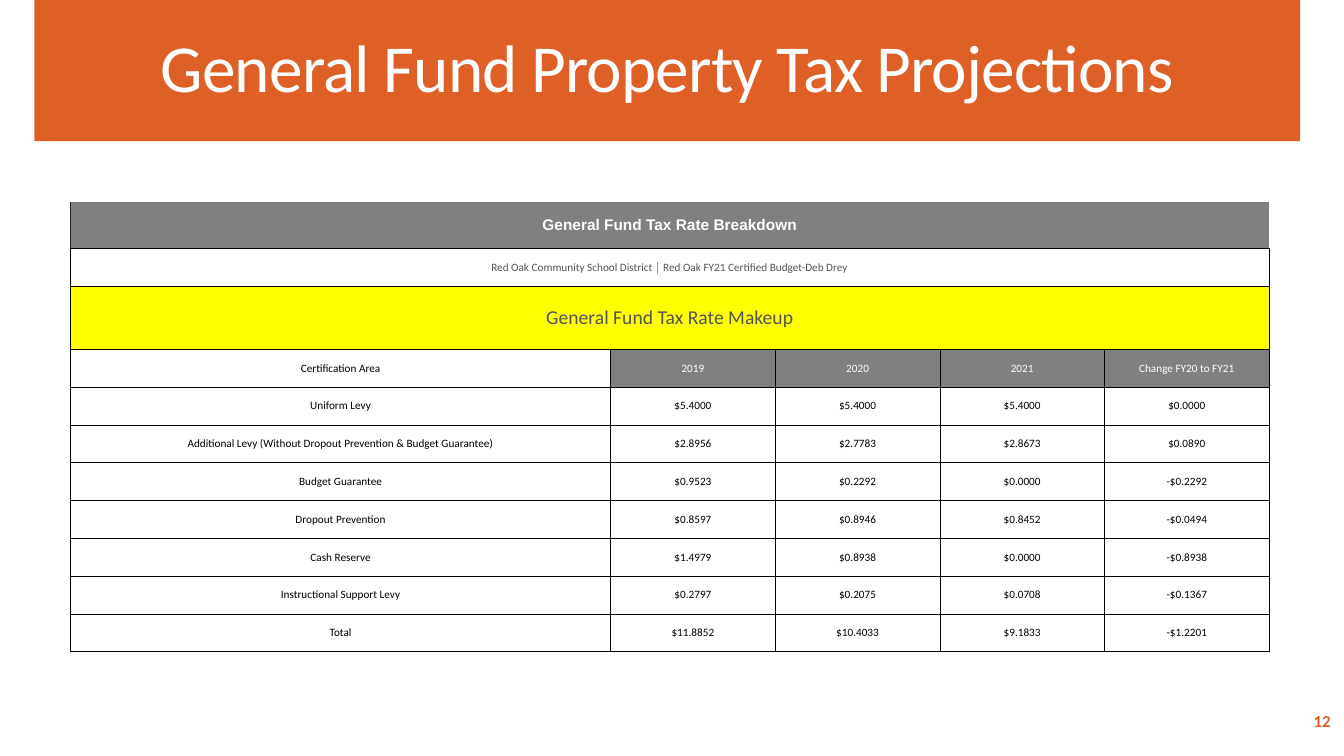
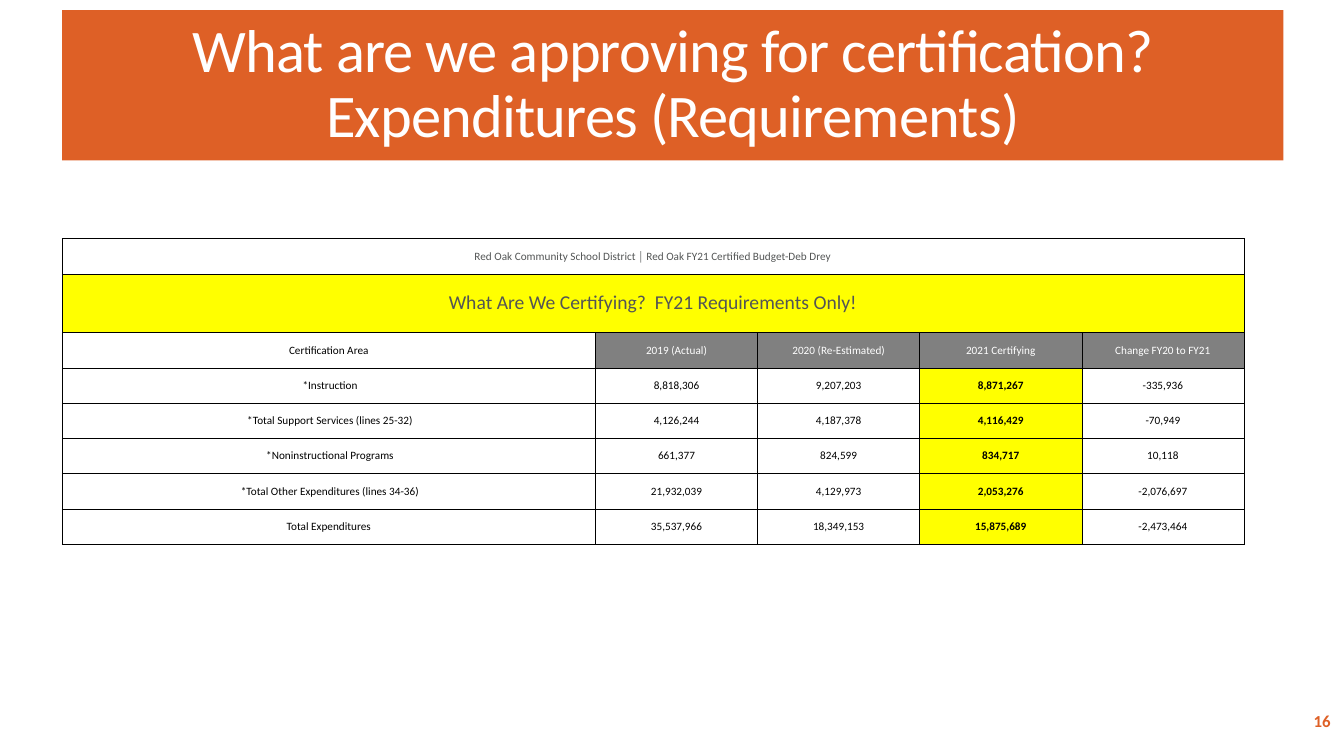
from lxml import etree
from pptx import Presentation
from pptx.dml.color import RGBColor
from pptx.enum import shapes, text
from pptx.oxml.ns import qn
from pptx.util import Pt

PX = 7620
ORANGE, WHITE, BLACK = "DE6026", "FFFFFF", "000000"
GRAY, YELLOW, SLATE, EDGE = "808080", "FFFF00", "535555", "262729"
FONT = "Calibri"

DISTRICT = "Red Oak Community School District │ Red Oak FY21 Certified Budget-Deb Drey"
RATES = [
    ("Certification Area", "2019", "2020", "2021", "Change FY20 to FY21"),
    ("Uniform Levy", "$5.4000", "$5.4000", "$5.4000", "$0.0000"),
    ("Additional Levy (Without Dropout Prevention & Budget Guarantee)",
     "$2.8956", "$2.7783", "$2.8673", "$0.0890"),
    ("Budget Guarantee", "$0.9523", "$0.2292", "$0.0000", "-$0.2292"),
    ("Dropout Prevention", "$0.8597", "$0.8946", "$0.8452", "-$0.0494"),
    ("Cash Reserve", "$1.4979", "$0.8938", "$0.0000", "-$0.8938"),
    ("Instructional Support Levy", "$0.2797", "$0.2075", "$0.0708", "-$0.1367"),
    ("Total", "$11.8852", "$10.4033", "$9.1833", "-$1.2201"),
]
COSTS = [
    ("Certification Area", "2019 (Actual)", "2020 (Re-Estimated)",
     "2021 Certifying", "Change FY20 to FY21"),
    (" *Instruction", "8,818,306", "9,207,203", "8,871,267", "-335,936"),
    (" *Total Support Services (lines 25-32)",
     "4,126,244", "4,187,378", "4,116,429", "-70,949"),
    (" *Noninstructional Programs", "661,377", "824,599", "834,717", "10,118"),
    (" *Total Other Expenditures (lines 34-36)",
     "21,932,039", "4,129,973", "2,053,276", "-2,076,697"),
    ("Total Expenditures", "35,537,966", "18,349,153", "15,875,689", "-2,473,464"),
]


def color(code):
    return RGBColor.from_string(code)


def box(*sides):
    return [side * PX for side in sides]


def write(frame, words, size, ink, bold=False, font=FONT, align="CENTER"):
    frame.word_wrap = True
    frame.vertical_anchor = text.MSO_ANCHOR.MIDDLE
    para = frame.paragraphs[0]
    para.text = words
    para.alignment = getattr(text.PP_ALIGN, align)
    para.font.name, para.font.size, para.font.bold = font, Pt(size), bold
    para.font.color.rgb = color(ink)
    return para


def title(slide, words, size, place):
    band = slide.shapes.add_shape(shapes.MSO_SHAPE.RECTANGLE, *box(*place))
    band.shadow.inherit = False
    band.fill.solid()
    band.fill.fore_color.rgb = color(ORANGE)
    band.line.fill.background()
    para = write(band.text_frame, words, size, WHITE)
    para.line_spacing = 0.9
    para._p.pPr.find(qn("a:defRPr")).set("spc", "-60")


def number(slide, words):
    label = slide.shapes.add_textbox(*box(1396, 834, 200, 48))
    write(label.text_frame, words, 12, ORANGE, True, align="RIGHT")


def border(cell, edges):
    props = cell._tc.get_or_add_tcPr()
    for spot, side in enumerate("LRTB"):
        line = etree.Element(qn("a:ln" + side), w=str(Pt(0.5)))
        if side in edges:
            fill = etree.SubElement(line, qn("a:solidFill"))
            etree.SubElement(fill, qn("a:srgbClr"), val=edges[side])
        else:
            etree.SubElement(line, qn("a:noFill"))
        props.insert(spot, line)


def paint(cell, back, edges):
    cell.margin_left = cell.margin_right = cell.margin_top = cell.margin_bottom = 0
    cell.vertical_anchor = text.MSO_ANCHOR.MIDDLE
    cell.fill.solid()
    cell.fill.fore_color.rgb = color(back)
    border(cell, edges)


def banner(grid, row, words, size, ink, back, bold=False, font=FONT, edges=None):
    for col in range(5):
        paint(grid.cell(row, col), back, edges or dict.fromkeys("LRTB", BLACK))
    grid.cell(row, 0).merge(grid.cell(row, 4))
    write(grid.cell(row, 0).text_frame, words, size, ink, bold, font)


def table(slide, left, top, wide, slim, tops, high, data, mark=None):
    widths = [wide] + [slim] * 4
    heights = [item[0] for item in tops] + [high] * len(data)
    frame = slide.shapes.add_table(
        len(heights), 5, *box(left, top, sum(widths), sum(heights)))
    grid = frame.table
    grid.first_row = grid.horz_banding = False
    for col, width in zip(grid.columns, widths):
        col.width = width * PX
    for row, height in zip(grid.rows, heights):
        row.height = height * PX
    for row, (_, style) in enumerate(tops):
        banner(grid, row, **style)
    for row, line in enumerate(data):
        for col, words in enumerate(line):
            head = row == 0 and col > 0
            key = row > 0 and col == mark
            cell = grid.cell(len(tops) + row, col)
            paint(cell, GRAY if head else YELLOW if key else WHITE,
                  dict.fromkeys("LRTB", BLACK))
            write(cell.text_frame, words, 8, WHITE if head else BLACK, key)


def main():
    deck = Presentation()
    deck.slide_width, deck.slide_height = box(1600, 900)
    blank = deck.slide_layouts[6]
    source = dict(words=DISTRICT, size=8, ink=SLATE, back=WHITE)
    topic = dict(size=14, ink=SLATE, back=YELLOW)
    lead = dict(words="General Fund Tax Rate Breakdown", size=11, ink=WHITE,
                back=GRAY, bold=True, font="Arial", edges={"L": EDGE, "B": BLACK})

    slide = deck.slides.add_slide(blank)
    number(slide, "12")
    title(slide, "General Fund Property Tax Projections", 48, (41, 0, 1507, 168))
    tops = [(55, lead), (45, source),
            (75, dict(topic, words="General Fund Tax Rate Makeup"))]
    table(slide, 84, 241, 643, 196, tops, 45, RATES)

    slide = deck.slides.add_slide(blank)
    number(slide, "16")
    title(slide, "What are we approving for certification?\vExpenditures (Requirements)",
          43.2, (74, 12, 1454, 179))
    tops = [(42, source),
            (70, dict(topic, words="What Are We Certifying?  FY21 Requirements Only!"))]
    table(slide, 74, 284, 635, 193, tops, 42, COSTS, mark=3)
    deck.save("out.pptx")


if __name__ == "__main__":
    main()
